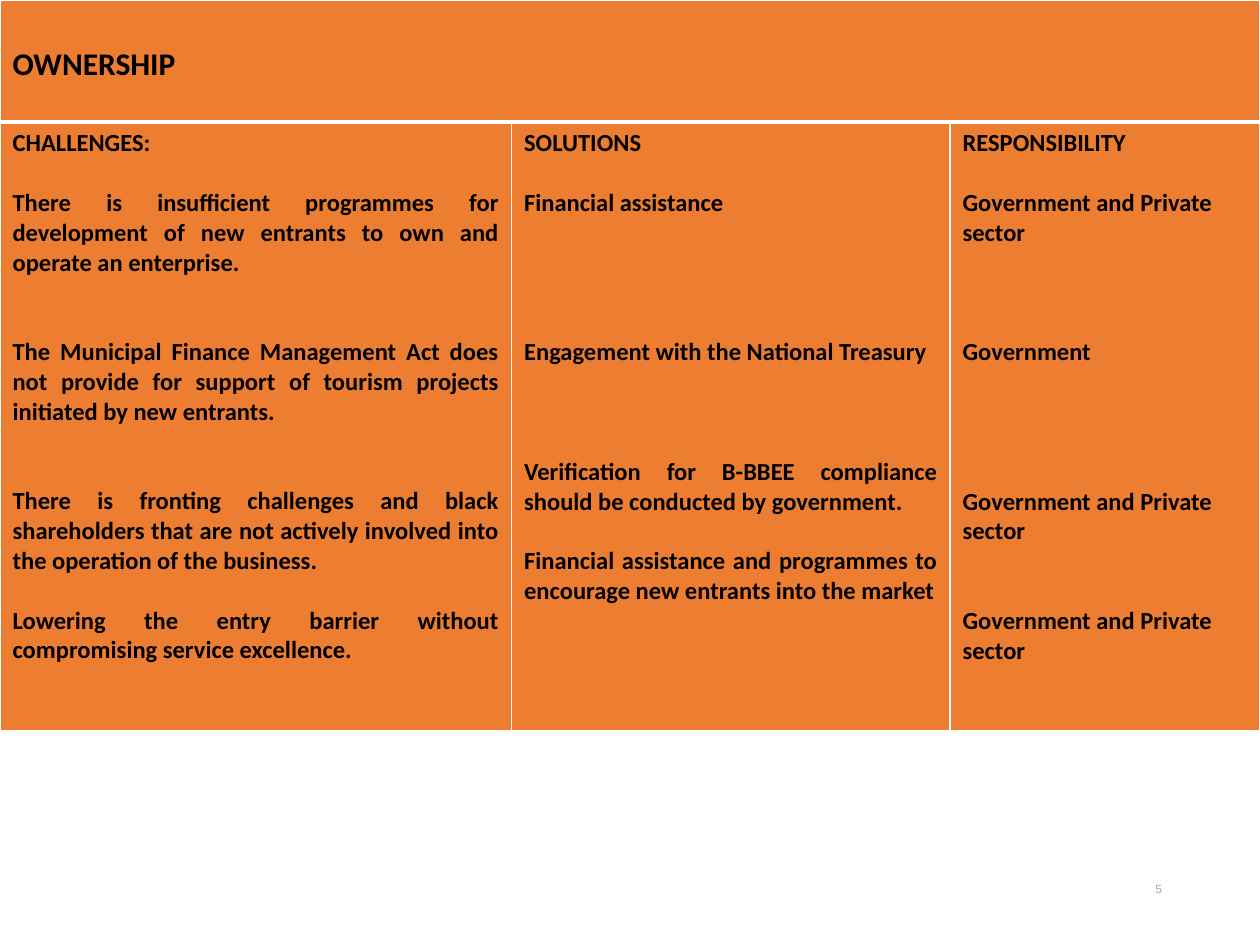
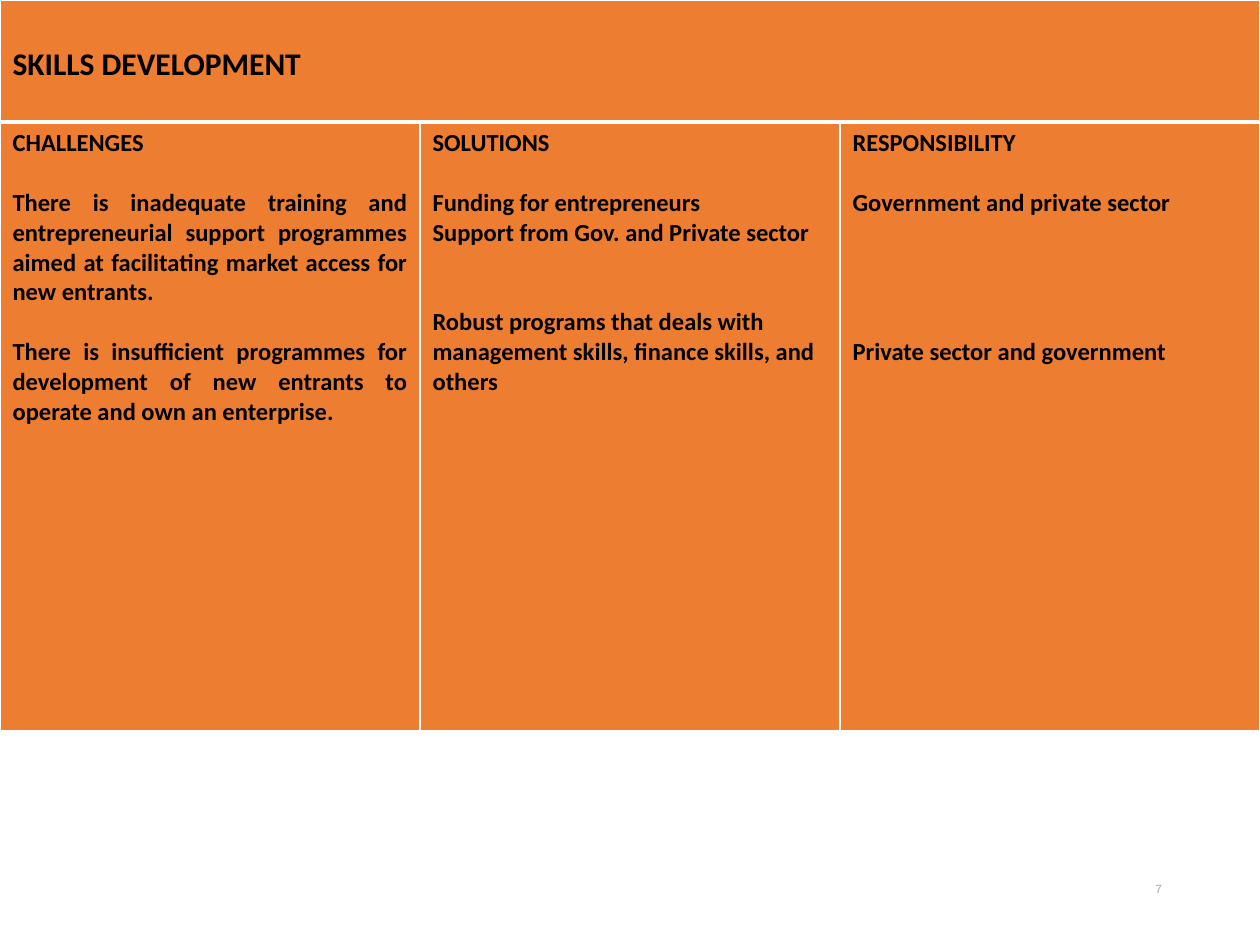
"""Build two slides that set challenges, solutions and responsibility side by side."""
import lxml.etree
import pptx
import pptx.dml.color
import pptx.enum.text
import pptx.oxml.ns
import pptx.util

COLORS = {"band": "ED7D31", "text": "000000", "rule": "FFFFFF", "number": "A6A6A6"}
WIDTH, HEIGHT = 10, 7.5
ROWS = [0.97, 4.83]
BODY_SIZE, TITLE_SIZE, NUMBER_SIZE = 14, 18, 6.8
BODY_LINE = 17.07
LEFT = pptx.enum.text.PP_ALIGN.LEFT
RIGHT = pptx.enum.text.PP_ALIGN.RIGHT
JUSTIFY = pptx.enum.text.PP_ALIGN.JUSTIFY

# Each entry: lines of space above, text, alignment.
OWNERSHIP = [
    [
        (0, "CHALLENGES:", LEFT),
        (1, "There is insufficient programmes for development of new entrants to own and operate an enterprise. ", JUSTIFY),
        (2, "The Municipal Finance Management Act does not provide for support of tourism projects initiated by new entrants. ", JUSTIFY),
        (2, "There is fronting challenges and black shareholders that are not actively involved into the operation of the business. ", JUSTIFY),
        (1, "Lowering the entry barrier without compromising service excellence.", JUSTIFY),
    ],
    [
        (0, "SOLUTIONS", LEFT),
        (1, "Financial assistance", LEFT),
        (4, "Engagement with the National Treasury", LEFT),
        (3, "Verification for B-BBEE compliance should be conducted by government.", JUSTIFY),
        (1, "Financial assistance and programmes to encourage new entrants into the market", JUSTIFY),
    ],
    [
        (0, "RESPONSIBILITY", LEFT),
        (1, "Government and Private sector", LEFT),
        (3, "Government", LEFT),
        (4, "Government and Private sector", LEFT),
        (2, "Government and Private sector", LEFT),
    ],
]
SKILLS = [
    [
        (0, "CHALLENGES", LEFT),
        (1, "There is inadequate training and entrepreneurial support programmes aimed at facilitating market access for new entrants. ", JUSTIFY),
        (1, "There is insufficient programmes for development of new entrants to operate and own an enterprise. ", JUSTIFY),
    ],
    [
        (0, "SOLUTIONS", LEFT),
        (1, "Funding for entrepreneurs", LEFT),
        (0, "Support from Gov. and Private sector", LEFT),
        (2, "Robust programs that deals with management skills, finance skills, and others", LEFT),
    ],
    [
        (0, "RESPONSIBILITY", LEFT),
        (1, "Government and private sector", LEFT),
        (4, "Private sector and government", LEFT),
    ],
]


class Page:
    """Hold the shared style and the current slide."""

    def __init__(self, deck):
        self.deck = deck
        self.slide = None

    def start(self):
        """Begin a new blank slide."""
        self.slide = self.deck.slides.add_slide(self.deck.slide_layouts[6])

    def set_text(self, para, text, size, color, font="Calibri", bold=True, align=LEFT):
        """Put one styled text into a paragraph."""
        para.text = text
        para.alignment = align
        for span in para.runs:
            span.font.name = font
            span.font.size = pptx.util.Pt(size)
            span.font.bold = bold
            span.font.color.rgb = pptx.dml.color.RGBColor.from_string(COLORS[color])

    def number(self, text):
        """Add the page number."""
        box = self.slide.shapes.add_textbox(
            *(pptx.util.Inches(length) for length in (8.11, 6.95, 1.21, 0.4)))
        box.text_frame.word_wrap = True
        self.set_text(box.text_frame.paragraphs[0], text, NUMBER_SIZE, "number", "Arial", False, RIGHT)

    def paint(self, cell, top, bottom):
        """Give a cell its white rules and orange fill."""
        properties = cell._tc.get_or_add_tcPr()
        for side, points in (("L", 1), ("R", 1), ("T", top), ("B", bottom)):
            line = lxml.etree.SubElement(
                properties, pptx.oxml.ns.qn(f"a:ln{side}"), w=str(pptx.util.Pt(points)))
            fill = lxml.etree.SubElement(line, pptx.oxml.ns.qn("a:solidFill"))
            lxml.etree.SubElement(fill, pptx.oxml.ns.qn("a:srgbClr"), val=COLORS["rule"])
        cell.fill.solid()
        cell.fill.fore_color.rgb = pptx.dml.color.RGBColor.from_string(COLORS["band"])

    def table(self, title, columns, shares):
        """Add a titled table with one body cell for each column."""
        table = self.slide.shapes.add_table(
            len(ROWS), len(columns), 0, 0,
            pptx.util.Inches(WIDTH), pptx.util.Inches(sum(ROWS))).table
        for row, height in zip(table.rows, ROWS):
            row.height = pptx.util.Inches(height)
        for column, share in zip(table.columns, shares):
            column.width = pptx.util.Inches(WIDTH * share / sum(shares))
        for index, entries in enumerate(columns):
            self.paint(table.cell(0, index), 1, 3)
            self.paint(table.cell(1, index), 3, 1)
            self.body(table.cell(1, index).text_frame, entries)
        header = table.cell(0, 0)
        header.merge(table.cell(0, len(columns) - 1))
        header.margin_top = pptx.util.Inches(0.36)
        self.set_text(header.text_frame.paragraphs[0], title, TITLE_SIZE, "text")

    def body(self, frame, entries):
        """Fill a body cell, spacing its paragraphs by whole lines."""
        for index, (gap, text, align) in enumerate(entries):
            para = frame.add_paragraph() if index else frame.paragraphs[0]
            para.space_before = pptx.util.Pt(gap * BODY_LINE)
            self.set_text(para, text, BODY_SIZE, "text", align=align)


def main():
    """Build and save the deck."""
    deck = pptx.Presentation()
    deck.slide_width = pptx.util.Inches(WIDTH)
    deck.slide_height = pptx.util.Inches(HEIGHT)
    page = Page(deck)
    for number, title, columns, shares in (
        ("5", "OWNERSHIP", OWNERSHIP, (4.06, 3.48, 2.46)),
        ("7", "SKILLS DEVELOPMENT", SKILLS, (1, 1, 1)),
    ):
        page.start()
        page.number(number)
        page.table(title, columns, shares)
    deck.save("out.pptx")


if __name__ == "__main__":
    main()
